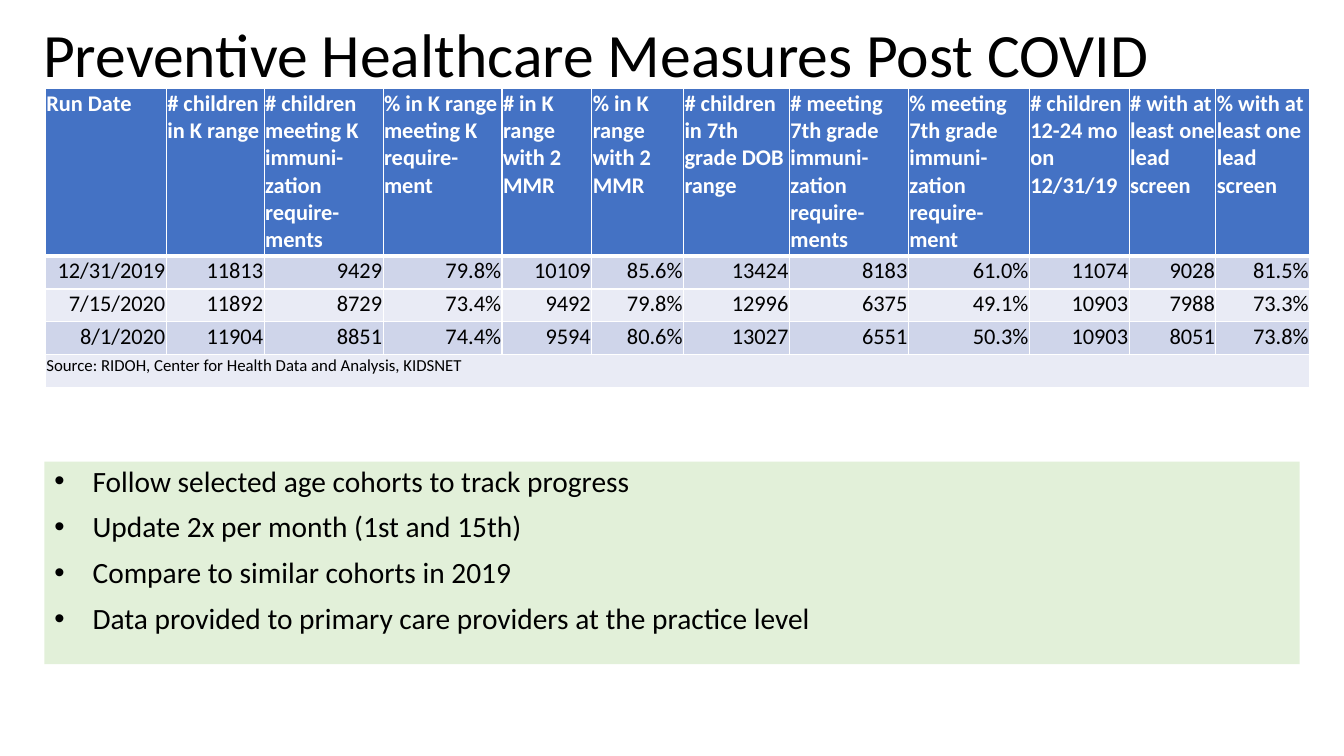
from dataclasses import dataclass

import lxml.etree
import pptx
import pptx.dml.color
import pptx.enum.shapes
import pptx.enum.text
import pptx.oxml
import pptx.oxml.ns
import pptx.slide
import pptx.table
import pptx.text.text
import pptx.util

RGBColor = pptx.dml.color.RGBColor
BLACK = RGBColor(0x00, 0x00, 0x00)
WHITE = RGBColor(0xFF, 0xFF, 0xFF)
HEADER_BLUE = RGBColor(0x44, 0x72, 0xC4)
DARK_BAND = RGBColor(0xCF, 0xD5, 0xEA)
LIGHT_BAND = RGBColor(0xE9, 0xEB, 0xF5)
PALE_GREEN = RGBColor(0xE2, 0xF0, 0xD9)

FONT = "Calibri"
EMU_PER_PX = 9144  # 100 px to the inch
LEFT = pptx.enum.text.PP_ALIGN.LEFT
RIGHT = pptx.enum.text.PP_ALIGN.RIGHT


@dataclass(frozen=True)
class Column:
    heading: str
    width: int
    values: tuple[str, str, str]


@dataclass(frozen=True)
class CellStyle:
    fill: RGBColor
    color: RGBColor = BLACK
    size: int = 16
    bold: bool = False
    alignment: pptx.enum.text.PP_ALIGN = RIGHT
    top_border: int = 1
    bottom_border: int = 1


TITLE = "Preventive Healthcare Measures Post COVID"
COLUMNS = [
    Column("Run Date", 120, ("12/31/2019", "7/15/2020", "8/1/2020")),
    Column("# children in K range", 97, ("11813", "11892", "11904")),
    Column("# children meeting K immuni-zation require-ments", 118, ("9429", "8729", "8851")),
    Column("% in K range meeting K require-ment", 118, ("79.8%", "73.4%", "74.4%")),
    Column("# in K range with 2 MMR", 89, ("10109", "9492", "9594")),
    Column("% in K range with 2 MMR", 91, ("85.6%", "79.8%", "80.6%")),
    Column("# children in 7th grade DOB range", 105, ("13424", "12996", "13027")),
    Column("# meeting 7th grade immuni-zation require-ments", 118, ("8183", "6375", "6551")),
    Column("% meeting 7th grade immuni-zation require-ment", 120, ("61.0%", "49.1%", "50.3%")),
    Column("# children 12-24 mo on 12/31/19", 99, ("11074", "10903", "10903")),
    Column("# with at least one lead screen", 86, ("9028", "7988", "8051")),
    Column("% with at least one lead screen", 93, ("81.5%", "73.3%", "73.8%")),
]
SOURCE = "Source: RIDOH, Center for Health Data and Analysis, KIDSNET"
ROW_HEIGHTS = [155, 31, 31, 31, 33]
ROW_STYLES = [
    CellStyle(HEADER_BLUE, WHITE, bold=True, alignment=LEFT, bottom_border=3),
    CellStyle(DARK_BAND, top_border=3),
    CellStyle(LIGHT_BAND),
    CellStyle(DARK_BAND),
    CellStyle(LIGHT_BAND, size=12, alignment=LEFT),
]
BULLETS = [
    "Follow selected age cohorts to track progress",
    "Update 2x per month (1st and 15th)",
    "Compare to similar cohorts in 2019",
    "Data provided to primary care providers at the practice level",
]


def px(length: int) -> pptx.util.Emu:
    return pptx.util.Emu(length * EMU_PER_PX)


def format_runs(
    paragraph: pptx.text.text._Paragraph, size: int, color: RGBColor, bold: bool = False
) -> None:
    for run in paragraph.runs:
        run.font.name = FONT
        run.font.size = pptx.util.Pt(size)
        run.font.bold = bold
        run.font.color.rgb = color


def add_title(slide: pptx.slide.Slide) -> None:
    title = slide.shapes.add_textbox(px(33), px(19), px(1267), px(77))
    title.text_frame.word_wrap = True
    title.text_frame.vertical_anchor = pptx.enum.text.MSO_ANCHOR.MIDDLE
    title.text_frame.text = TITLE
    paragraph = title.text_frame.paragraphs[0]
    paragraph.line_spacing = 0.9
    format_runs(paragraph, 44, BLACK)


def add_bullet_panel(slide: pptx.slide.Slide) -> None:
    panel = slide.shapes.add_shape(
        pptx.enum.shapes.MSO_SHAPE.RECTANGLE, px(44), px(458), px(1245), px(201)
    )
    panel.shadow.inherit = False
    panel.fill.solid()
    panel.fill.fore_color.rgb = PALE_GREEN
    panel.line.fill.background()
    text_frame = panel.text_frame
    text_frame.word_wrap = True
    text_frame.vertical_anchor = pptx.enum.text.MSO_ANCHOR.TOP
    text_frame.text = "\n".join(BULLETS)
    for index, paragraph in enumerate(text_frame.paragraphs):
        properties = paragraph._p.get_or_add_pPr()
        properties.set("marL", str(px(38)))
        properties.set("indent", str(px(-38)))
        bullet_font = lxml.etree.SubElement(properties, pptx.oxml.ns.qn("a:buFont"))
        bullet_font.set("typeface", "Arial")
        bullet = lxml.etree.SubElement(properties, pptx.oxml.ns.qn("a:buChar"))
        bullet.set("char", "•")
        paragraph.alignment = LEFT
        paragraph.line_spacing = 0.9
        if index > 0:
            paragraph.space_before = pptx.util.Pt(10)
        format_runs(paragraph, 21, BLACK)


def add_cell_borders(cell: pptx.table._Cell, style: CellStyle) -> None:
    """Draw the white borders; call before filling, as borders precede the fill."""
    widths = {"L": 1, "R": 1, "T": style.top_border, "B": style.bottom_border}
    properties = cell._tc.get_or_add_tcPr()
    for side, width in widths.items():
        properties.append(
            pptx.oxml.parse_xml(
                f'<a:ln{side} {pptx.oxml.ns.nsdecls("a")} w="{pptx.util.Pt(width)}">'
                f'<a:solidFill><a:srgbClr val="{WHITE}"/></a:solidFill></a:ln{side}>'
            )
        )


def style_cell(cell: pptx.table._Cell, style: CellStyle) -> None:
    add_cell_borders(cell, style)
    cell.fill.solid()
    cell.fill.fore_color.rgb = style.fill
    cell.margin_left = cell.margin_right = cell.margin_top = px(1)
    cell.margin_bottom = px(5)
    paragraph = cell.text_frame.paragraphs[0]
    paragraph.alignment = style.alignment
    format_runs(paragraph, style.size, style.color, style.bold)


def add_measures_table(slide: pptx.slide.Slide) -> None:
    table = slide.shapes.add_table(
        len(ROW_HEIGHTS),
        len(COLUMNS),
        px(45),
        px(88),
        px(sum(column.width for column in COLUMNS)),
        px(sum(ROW_HEIGHTS)),
    ).table
    for row, height in zip(table.rows, ROW_HEIGHTS):
        row.height = px(height)
    for column_index, column in enumerate(COLUMNS):
        table.columns[column_index].width = px(column.width)
        for row_index, text in enumerate((column.heading, *column.values)):
            table.cell(row_index, column_index).text_frame.text = text
    source_row = len(ROW_HEIGHTS) - 1
    source_cell = table.cell(source_row, 0)
    source_cell.merge(table.cell(source_row, len(COLUMNS) - 1))
    source_cell.text_frame.text = SOURCE
    for row, style in zip(table.rows, ROW_STYLES):
        for cell in row.cells:
            style_cell(cell, style)


def main() -> None:
    presentation = pptx.Presentation()
    presentation.slide_width = px(1333)
    presentation.slide_height = px(750)
    slide = presentation.slides.add_slide(presentation.slide_layouts[6])
    add_title(slide)
    add_bullet_panel(slide)
    add_measures_table(slide)
    presentation.save("out.pptx")


if __name__ == "__main__":
    main()
